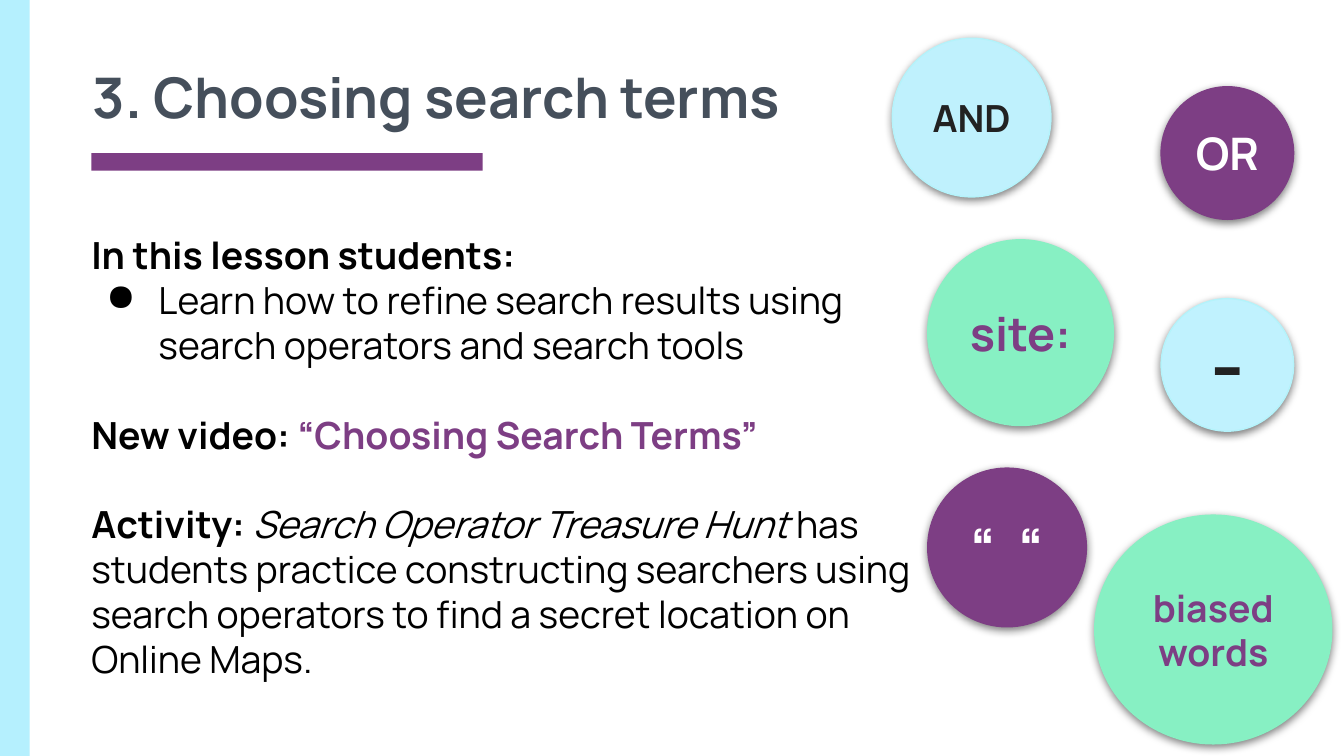
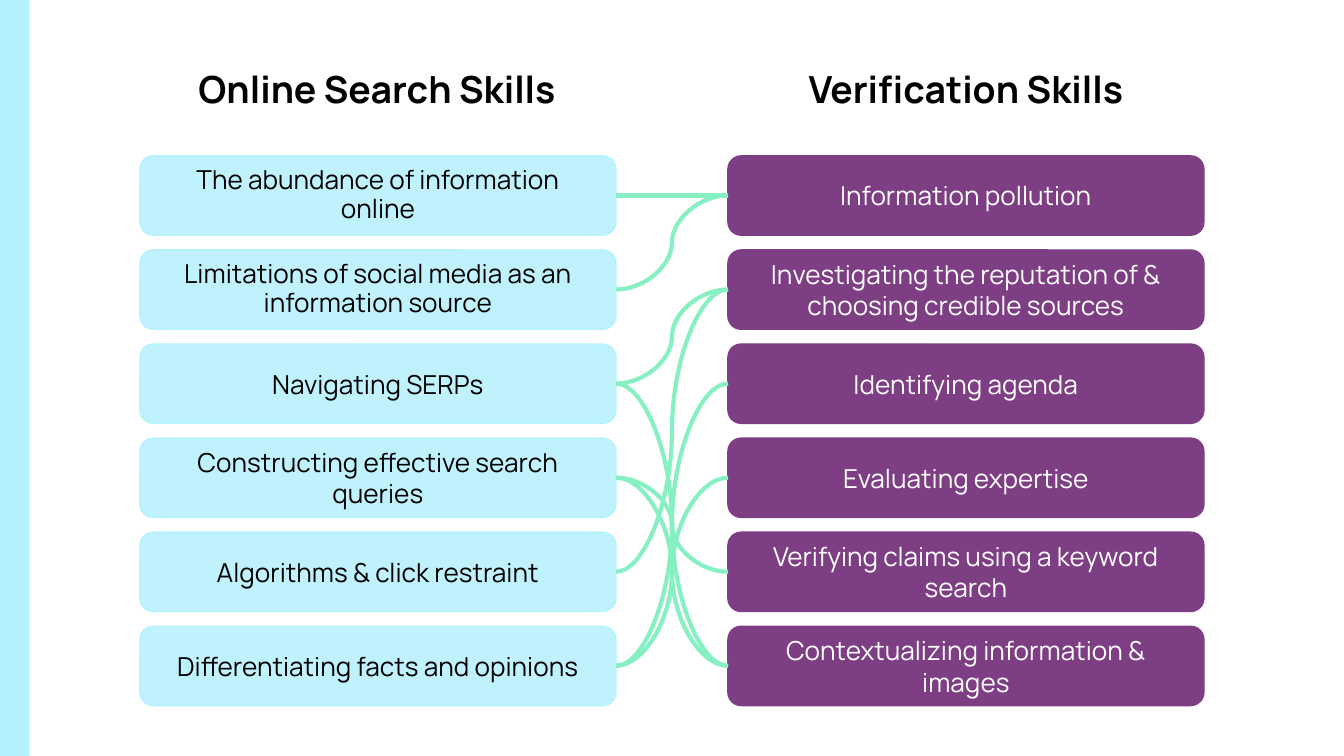
"""Build two lesson slides on search terms and the skills behind them."""
import lxml.etree
import pptx
import pptx.dml.color
import pptx.enum.shapes
import pptx.enum.text
import pptx.oxml.ns
import pptx.util

Pt = pptx.util.Pt
qn = pptx.oxml.ns.qn
SHAPE = pptx.enum.shapes.MSO_SHAPE
ALIGN = pptx.enum.text.PP_ALIGN
ANCHOR = pptx.enum.text.MSO_ANCHOR
FIT = pptx.enum.text.MSO_AUTO_SIZE

FONT = "Manrope"
PURPLE = "7D3E84"
MINT = "87F0C3"
SKY = "C0F2FE"
PALE = "BFF1FD"
EDGE = "B4F3FB"
BAND = "B5F0FE"
SLATE = "454F5B"
DARK = "222222"
BLACK = "000000"
WHITE = "FFFFFF"


def tint(text):
    return pptx.dml.color.RGBColor.from_string(text)


def style(run, size, ink, bold=False, slant=False):
    font = run.font
    font.name = FONT
    font.size = Pt(size)
    font.color.rgb = tint(ink)
    font.bold = bold
    font.italic = slant


def pad(frame, anchor):
    frame.word_wrap = True
    frame.vertical_anchor = anchor
    frame.margin_left = frame.margin_right = Pt(7.2)
    frame.margin_top = frame.margin_bottom = Pt(7.2)


def draw(slide, kind, box, fill, edge=None):
    shape = slide.shapes.add_shape(kind, *map(Pt, box))
    shape.shadow.inherit = False
    shape.fill.solid()
    shape.fill.fore_color.rgb = tint(fill)
    if edge:
        shape.line.color.rgb = tint(edge)
        shape.line.width = Pt(0.75)
    else:
        shape.line.fill.background()
    return shape


def label(shape, text, size, ink, bold=False):
    frame = shape.text_frame
    pad(frame, ANCHOR.MIDDLE)
    frame.text = text
    line = frame.paragraphs[0]
    line.alignment = ALIGN.CENTER
    style(line.runs[0], size, ink, bold)
    return line


def text_box(slide, box, anchor=ANCHOR.TOP, fit=FIT.SHAPE_TO_FIT_TEXT):
    frame = slide.shapes.add_textbox(*map(Pt, box)).text_frame
    pad(frame, anchor)
    frame.auto_size = fit
    return frame


def heading(slide, box, text, size, ink, align, **extra):
    frame = text_box(slide, box, **extra)
    frame.text = text
    line = frame.paragraphs[0]
    line.alignment = align
    style(line.runs[0], size, ink, True)


def bullet(line, ink):
    props = line._p.get_or_add_pPr()
    props.set("marL", str(Pt(36)))
    props.set("indent", str(-Pt(28)))
    shade = lxml.etree.SubElement(props, qn("a:buClr"))
    lxml.etree.SubElement(shade, qn("a:srgbClr"), val=ink)
    lxml.etree.SubElement(props, qn("a:buChar"), char="●")


def cast(shape):
    effect = shape._element.spPr.find(qn("a:effectLst"))
    drop = lxml.etree.SubElement(
        effect, qn("a:outerShdw"), blurRad=str(Pt(4.5)), dist=str(Pt(1.5)),
        dir="5400000", algn="bl", rotWithShape="0")
    shade = lxml.etree.SubElement(drop, qn("a:srgbClr"), val=BLACK)
    lxml.etree.SubElement(shade, qn("a:alpha"), val="50000")


def bubble(slide, box, text, size, fill, edge, ink):
    shape = draw(slide, SHAPE.OVAL, box, fill, edge)
    cast(shape)
    label(shape, text, size, ink, True)


def curve(slide, start, end):
    link = slide.shapes.add_connector(
        pptx.enum.shapes.MSO_CONNECTOR.CURVE,
        start.left + start.width, start.top + start.height // 2,
        end.left, end.top + end.height // 2)
    link.begin_connect(start, 3)
    link.end_connect(end, 1)
    link.line.color.rgb = tint(MINT)
    link.line.width = Pt(2.25)
    lxml.etree.SubElement(link._element.spPr, qn("a:effectLst"))


def stack(slide, left, texts, fill, edge, ink, tight=()):
    cards = []
    for row, text in enumerate(texts):
        box = (left, 83.5 + 50.4 * row, 255, 42.5)
        card = draw(slide, SHAPE.ROUNDED_RECTANGLE, box, fill, edge)
        line = label(card, text, 14, ink)
        if row in tight:
            line.line_spacing = 0.9
        cards.append(card)
    return cards


def new_slide(deck):
    slide = deck.slides.add_slide(deck.slide_layouts[6])
    slide.background.fill.solid()
    slide.background.fill.fore_color.rgb = tint(WHITE)
    draw(slide, SHAPE.RECTANGLE, (0, 0, 16, 405), BAND)
    return slide


def lesson(slide):
    draw(slide, SHAPE.RECTANGLE, (49, 82, 209.5, 9.4), PURPLE)
    heading(slide, (42.5, 37.5, 629, 39), "3. Choosing search terms", 30,
            SLATE, ALIGN.LEFT, anchor=ANCHOR.BOTTOM, fit=FIT.NONE)
    parts = [
        (0, [("In this lesson students:", BLACK, True)]),
        (0, [("Learn how to refine search results using search operators "
              "and search tools", BLACK)]),
        (24, [("New video: ", BLACK, True),
              ("“Choosing Search Terms”", PURPLE, True)]),
        (24, [("Activity: ", BLACK, True),
              ("Search Operator Treasure Hunt", BLACK, False, True),
              (" has students practice constructing searchers using search "
               "operators to find a secret location on Online Maps.", BLACK)]),
    ]
    frame = text_box(slide, (41.8, 117.4, 455, 257))
    for row, (gap, runs) in enumerate(parts):
        line = frame.add_paragraph() if row else frame.paragraphs[0]
        if gap:
            line.space_before = Pt(gap)
        if row == 1:
            bullet(line, BLACK)
        for text, *look in runs:
            run = line.add_run()
            run.text = text
            style(run, 20, *look)

    bubbles = [
        ((478, 20.5, 85, 85), "AND", 20, PALE, EDGE, DARK),
        ((622, 46.5, 71, 71), "OR", 24, PURPLE, PURPLE, WHITE),
        ((622, 160, 71, 71), "-", 44, SKY, EDGE, DARK),
        ((497, 128.5, 99.5, 99.5), "site:", 25, MINT, MINT, PURPLE),
        ((497, 250.8, 85, 85), "“  “", 30, PURPLE, PURPLE, WHITE),
        ((586.5, 276, 127, 122.5), "biased words", 20, MINT, MINT, PURPLE),
    ]
    for item in bubbles:
        bubble(slide, *item)


def skills(slide):
    heading(slide, (81, 28, 242, 39), "Online Search Skills", 20, BLACK,
            ALIGN.CENTER)
    heading(slide, (399.5, 28, 236, 39), "Verification Skills", 20, BLACK,
            ALIGN.CENTER)
    search = stack(slide, 75, [
        "The abundance of information online",
        "Limitations of social media as an information source",
        "Navigating SERPs",
        "Constructing effective search queries",
        "Algorithms & click restraint",
        "Differentiating facts and opinions",
    ], SKY, EDGE, BLACK, tight=(0, 1))
    verify = stack(slide, 390, [
        "Information pollution",
        "Investigating the reputation of & choosing credible sources",
        "Identifying agenda",
        "Evaluating expertise",
        "Verifying claims using a keyword search",
        "Contextualizing information & images",
    ], PURPLE, PURPLE, WHITE)
    pairs = [(0, 0), (1, 0), (3, 4), (3, 5), (5, 3), (5, 2), (2, 1), (4, 1),
             (2, 5)]
    for start, end in pairs:
        curve(slide, search[start], verify[end])


def main():
    deck = pptx.Presentation()
    deck.slide_width = Pt(720)
    deck.slide_height = Pt(405)
    lesson(new_slide(deck))
    skills(new_slide(deck))
    deck.save("out.pptx")


if __name__ == "__main__":
    main()
